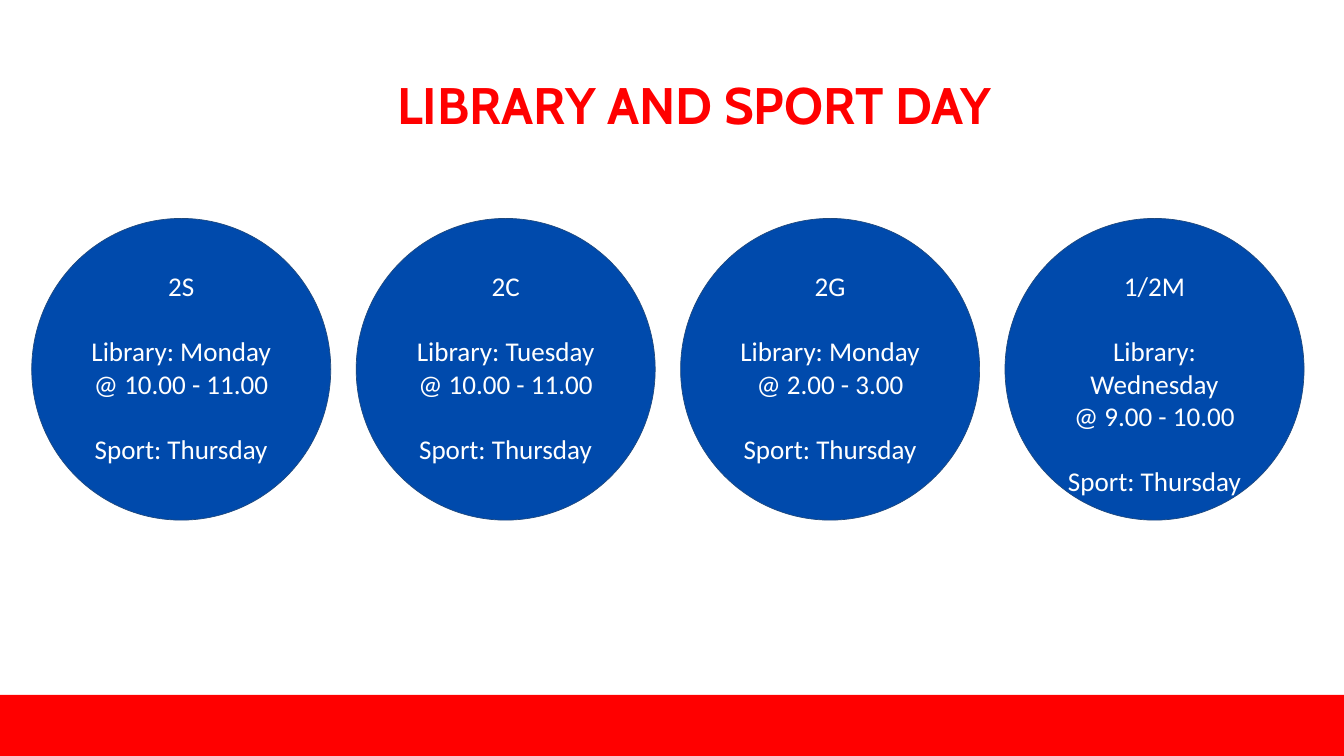
from dataclasses import dataclass

from pptx import Presentation
from pptx import util as u
from pptx.dml.color import RGBColor
from pptx.enum import shapes, text

COLOURS = {
    "red": "FF0000",
    "blue": "004AAC",
    "outline": "1F497D",
    "white": "FFFFFF",
}

# All lengths are in points
SLIDE_WIDTH, SLIDE_HEIGHT = 1440, 810
BAND_HEIGHT = 65.5
CIRCLE_LEFT, CIRCLE_TOP = 34, 234
CIRCLE_WIDTH, CIRCLE_HEIGHT = 320.4, 323.3
CIRCLE_PITCH = 347.6
CIRCLE_INSET = 7.2
BODY_SIZE = 29
LINE_GAP = 35


@dataclass
class ClassDay:
    name: str
    library: list[str]
    sport: str = "Sport: Thursday"


CLASS_DAYS = [
    ClassDay("2S", ["Library: Monday @ 10.00 - 11.00"]),
    ClassDay("2C", ["Library: Tuesday @ 10.00 - 11.00"]),
    ClassDay("2G", ["Library: Monday @ 2.00 - 3.00"]),
    ClassDay("1/2M", ["Library: Wednesday", "@ 9.00 - 10.00"]),
]


def colour(name: str) -> RGBColor:
    return RGBColor.from_string(COLOURS[name])


def set_insets(frame, side: float, top: float, bottom: float) -> None:
    frame.margin_left = frame.margin_right = u.Pt(side)
    frame.margin_top, frame.margin_bottom = u.Pt(top), u.Pt(bottom)


def format_paragraph(paragraph, font: str, size: float, colour_name: str,
                     bold: bool = False) -> None:
    paragraph.alignment = text.PP_ALIGN.CENTER
    for run in paragraph.runs:
        run.font.name = font
        run.font.size = u.Pt(size)
        run.font.bold = bold
        run.font.color.rgb = colour(colour_name)


def add_filled_shape(slide, kind, left: float, top: float, width: float,
                     height: float, fill: str):
    shape = slide.shapes.add_shape(
        kind, u.Pt(left), u.Pt(top), u.Pt(width), u.Pt(height))
    shape.shadow.inherit = False
    shape.fill.solid()
    shape.fill.fore_color.rgb = colour(fill)
    return shape


def add_title(slide, title: str) -> None:
    box = slide.shapes.add_textbox(u.Pt(90), u.Pt(77.8), u.Pt(1307.5), u.Pt(67.7))
    frame = box.text_frame
    frame.word_wrap = True
    set_insets(frame, 0, 0.72, 0)
    frame.text = title
    format_paragraph(frame.paragraphs[0], "Cabin", 55, "red", bold=True)


def add_band(slide) -> None:
    band = add_filled_shape(slide, shapes.MSO_SHAPE.RECTANGLE, 0,
                            SLIDE_HEIGHT - BAND_HEIGHT, SLIDE_WIDTH,
                            BAND_HEIGHT, "red")
    band.line.fill.background()


def add_class_circle(slide, day: ClassDay, left: float) -> None:
    circle = add_filled_shape(slide, shapes.MSO_SHAPE.OVAL, left, CIRCLE_TOP,
                              CIRCLE_WIDTH, CIRCLE_HEIGHT, "blue")
    circle.line.color.rgb = colour("outline")
    circle.line.width = u.Pt(0.75)

    frame = circle.text_frame
    frame.word_wrap = True
    frame.vertical_anchor = text.MSO_ANCHOR.TOP
    set_insets(frame, CIRCLE_INSET, CIRCLE_INSET, CIRCLE_INSET)
    frame.text = "\n".join([day.name, *day.library, day.sport])
    for paragraph in frame.paragraphs:
        format_paragraph(paragraph, "Calibri", BODY_SIZE, "white")

    # A line of space before the library and sport entries
    for paragraph in (frame.paragraphs[1], frame.paragraphs[-1]):
        paragraph.space_before = u.Pt(LINE_GAP)


def main() -> None:
    presentation = Presentation()
    presentation.slide_width = u.Pt(SLIDE_WIDTH)
    presentation.slide_height = u.Pt(SLIDE_HEIGHT)
    slide = presentation.slides.add_slide(presentation.slide_layouts[6])

    # Title and bottom band
    add_title(slide, "LIBRARY AND SPORT DAY")
    add_band(slide)

    # One circle per class
    for index, day in enumerate(CLASS_DAYS):
        add_class_circle(slide, day, CIRCLE_LEFT + index * CIRCLE_PITCH)

    presentation.save("out.pptx")


if __name__ == "__main__":
    main()
